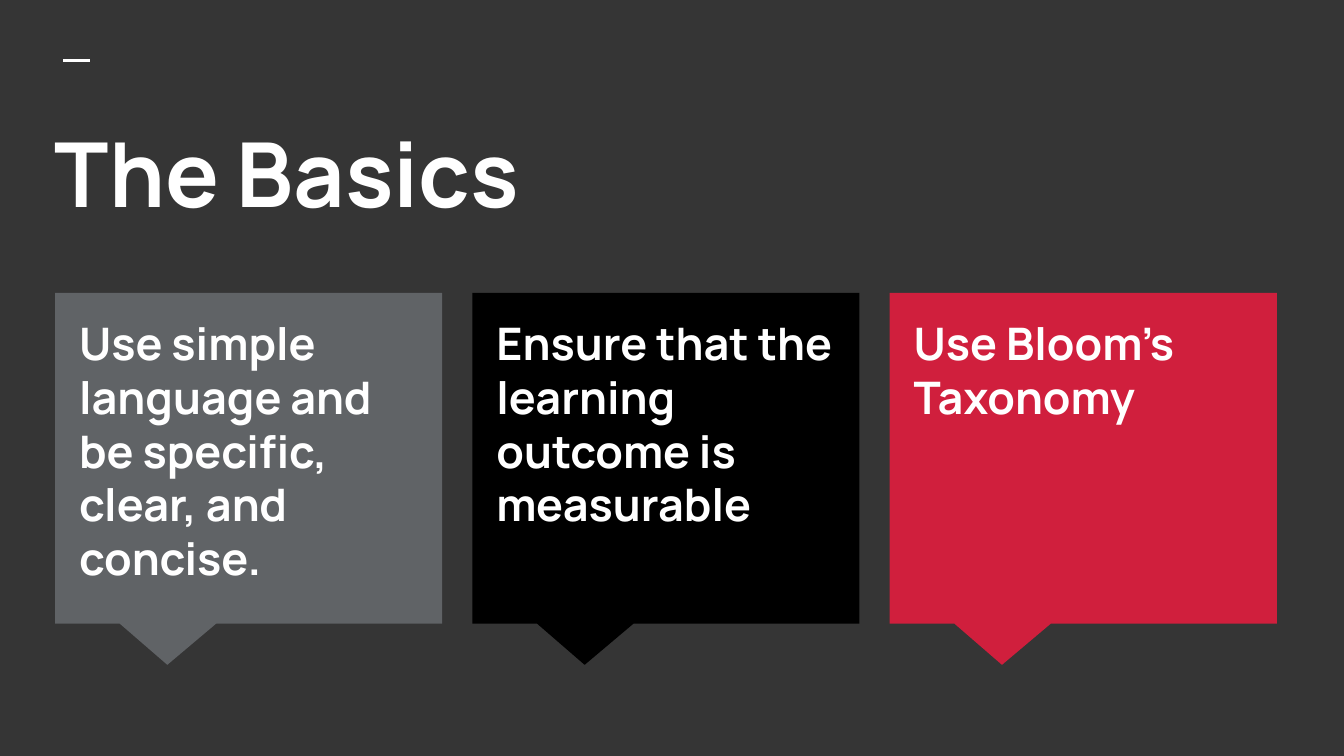
from lxml.etree import SubElement
from pptx import Presentation
from pptx.dml.color import RGBColor
from pptx.enum.shapes import MSO_CONNECTOR as Connector, MSO_SHAPE as Shape
from pptx.enum.text import MSO_ANCHOR as Anchor
from pptx.oxml.ns import qn
from pptx.util import Inches, Pt

BACKGROUND = RGBColor(0x35, 0x35, 0x35)
WHITE = RGBColor(0xFF, 0xFF, 0xFF)
GRAY = RGBColor(0x60, 0x63, 0x66)
BLACK = RGBColor(0x00, 0x00, 0x00)
RED = RGBColor(0xD0, 0x1F, 0x3D)

FIRST_LEFT, LAST_LEFT = 0.41, 6.62
CARD_TOP, CARD_WIDTH, CARD_HEIGHT = 2.18, 2.88, 2.46
TEXT_INSET_X, TEXT_INSET_Y = 0.08, 0.07

tips = [
    ("Use simple language and be specific, clear, and concise.", GRAY),
    ("Ensure that the learning outcome is measurable", BLACK),
    ("Use Bloom’s Taxonomy", RED),
]
column_step = (LAST_LEFT - FIRST_LEFT) / (len(tips) - 1)

prs = Presentation()
prs.slide_width = Inches(10)
prs.slide_height = prs.slide_width * 9 // 16
slide = prs.slides.add_slide(prs.slide_layouts[6])
slide.background.fill.solid()
slide.background.fill.fore_color.rgb = BACKGROUND


def add_heading(text, left, top, width, height, size):
    heading = slide.shapes.add_textbox(
        Inches(left), Inches(top), Inches(width), Inches(height))
    frame = heading.text_frame
    frame.text = text
    frame.word_wrap = True
    frame.vertical_anchor = Anchor.TOP
    frame.margin_left = frame.margin_right = Inches(0.1)
    frame.margin_top = frame.margin_bottom = Inches(0.1)
    font = frame.paragraphs[0].runs[0].font
    font.name, font.size, font.bold = "Manrope", Pt(size), True
    font.color.rgb = WHITE


accent = slide.shapes.add_connector(
    Connector.STRAIGHT, Inches(0.47), Inches(0.45), Inches(0.67), Inches(0.45))
accent.line.color.rgb = WHITE
accent.line.width = Pt(1.5)
SubElement(accent._element.spPr, qn("a:effectLst"))

add_heading("The Basics", 0.31, 0.78, 9.43, 1.12, 48)

for column, (tip, color) in enumerate(tips):
    left = FIRST_LEFT + column * column_step
    card = slide.shapes.add_shape(
        Shape.RECTANGULAR_CALLOUT, Inches(left), Inches(CARD_TOP),
        Inches(CARD_WIDTH), Inches(CARD_HEIGHT))
    card.adjustments[0], card.adjustments[1] = -0.21, 0.625
    card.shadow.inherit = False
    card.fill.solid()
    card.fill.fore_color.rgb = color
    card.line.fill.background()
    add_heading(tip, left + TEXT_INSET_X, CARD_TOP + TEXT_INSET_Y, 2.71, 2.19, 24)

prs.save("out.pptx")
